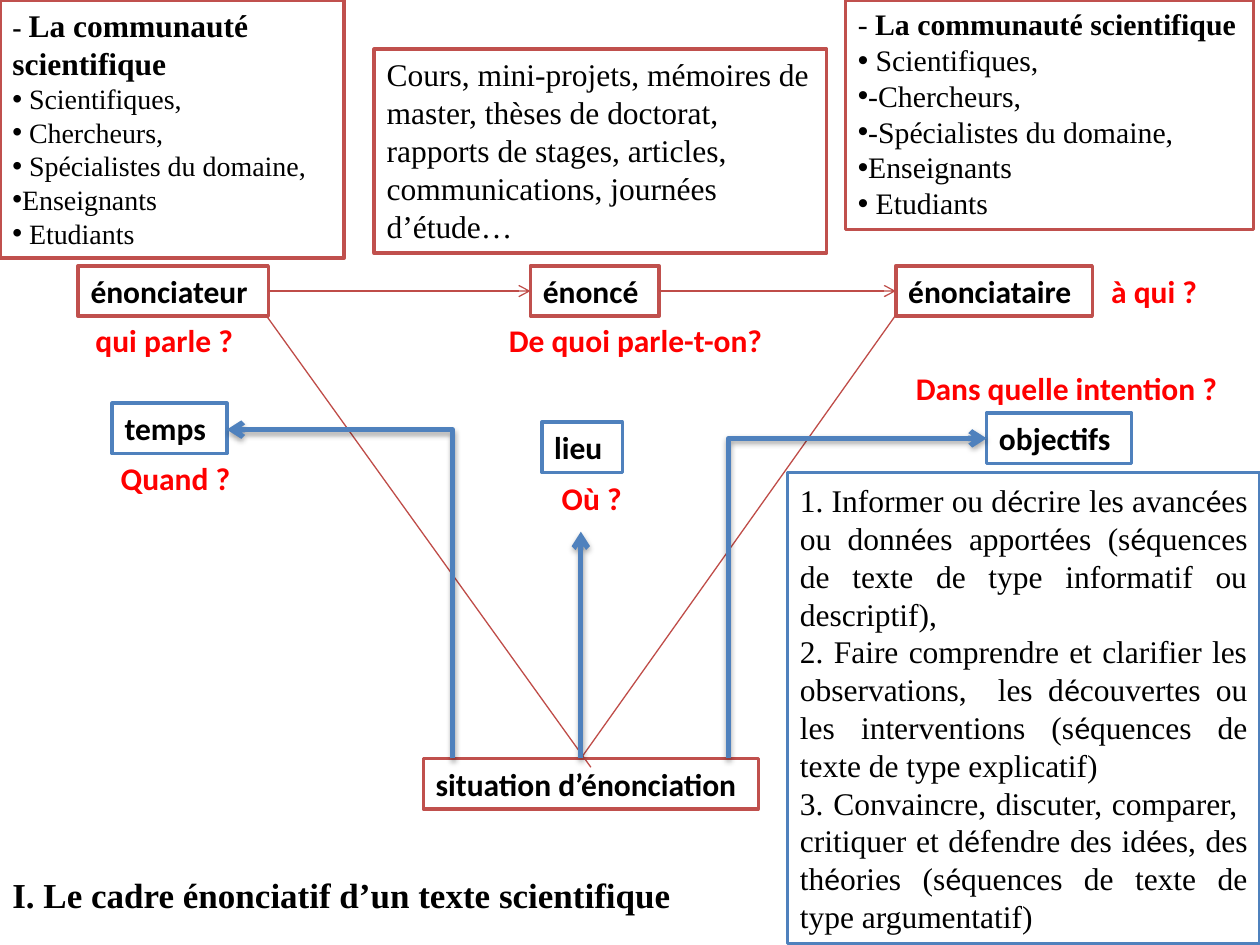
from collections import namedtuple
from lxml.etree import SubElement
from pptx import Presentation
from pptx.dml.color import RGBColor
from pptx.enum.shapes import MSO_CONNECTOR, MSO_SHAPE
from pptx.enum.text import MSO_ANCHOR, MSO_AUTO_SIZE, PP_ALIGN
from pptx.oxml.ns import qn
from pptx.util import Inches, Pt

HUES = {"red": "C0504D", "wire": "BF4C48", "blue": "4F81BD",
        "ask": "FF0000", "ink": "000000", "paper": "FFFFFF"}
SANS, SERIF = "Calibri", "Times New Roman"
COLS, ROWS = 100, 75
TAG = 4

Box = namedtuple("Box", "x y w h")

deck = Presentation()
deck.slide_width, deck.slide_height = Inches(10), Inches(7.5)
slide = deck.slides.add_slide(deck.slide_layouts[6])


def hue(name):
    return RGBColor.from_string(HUES[name])


def across(cols):
    return round(cols * deck.slide_width / COLS)


def down(rows):
    return round(rows * deck.slide_height / ROWS)


def inside(box, x, y, w, h):
    return Box(box.x + x, box.y + y, w, h)


def write(box, paras, line=None, size=18, font=SANS, color="ink", bold=False,
          wrap=False, bullets=False, align=PP_ALIGN.LEFT, anchor=MSO_ANCHOR.TOP):
    place = across(box.x), down(box.y), across(box.w), down(box.h)
    if line:
        shape = slide.shapes.add_shape(MSO_SHAPE.RECTANGLE, *place)
        shape.shadow.inherit = False
        shape.fill.solid()
        shape.fill.fore_color.rgb = hue("paper")
        shape.line.color.rgb = hue(line)
        shape.line.width = Pt(2)
    else:
        shape = slide.shapes.add_textbox(*place)
    frame = shape.text_frame
    frame.word_wrap = wrap
    frame.auto_size = MSO_AUTO_SIZE.SHAPE_TO_FIT_TEXT
    frame.vertical_anchor = anchor
    for i, runs in enumerate(paras):
        para = frame.paragraphs[0] if i == 0 else frame.add_paragraph()
        para.alignment = align
        if bullets and i:
            props = para._p.get_or_add_pPr()
            SubElement(props, qn("a:buFont")).set("typeface", "Arial")
            SubElement(props, qn("a:buChar")).set("char", "•")
        for part in [(runs, {})] if isinstance(runs, str) else runs:
            words, form = part
            run = para.add_run()
            run.text = words
            run.font.size = Pt(form.get("size", size))
            run.font.name = form.get("font", font)
            run.font.bold = form.get("bold", bold)
            run.font.color.rgb = hue(color)
    return shape


def style(link, color, width, arrow=True, shade=False):
    link.line.color.rgb = hue(color)
    link.line.width = Pt(width)
    if arrow:
        SubElement(link.line._get_or_add_ln(), qn("a:tailEnd")).set("type", "arrow")
    effects = SubElement(link._element.spPr, qn("a:effectLst"))
    if shade:
        cast = SubElement(effects, qn("a:outerShdw"), blurRad="40000",
                          dist="23000", dir="5400000", rotWithShape="0")
        tint = SubElement(cast, qn("a:srgbClr"), val=HUES["ink"])
        SubElement(tint, qn("a:alpha"), val="35000")


def join(start, end):
    return slide.shapes.add_connector(
        MSO_CONNECTOR.STRAIGHT, across(start[0]), down(start[1]),
        across(end[0]), down(end[1]))


def bend(start, end):
    x, y = across(start[0]), down(start[1])
    dx, dy = across(end[0]) - x, down(end[1]) - y
    link = slide.shapes.add_connector(MSO_CONNECTOR.ELBOW, 0, 0, 0, 0)
    link.width, link.height = abs(dy), abs(dx)
    link.left = x + (dx - abs(dy)) // 2
    link.top = y + (dy - abs(dx)) // 2
    form = link._element.spPr
    form.find(qn("a:prstGeom")).set("prst", "bentConnector2")
    turn = form.find(qn("a:xfrm"))
    turn.set("rot", "5400000" if dx > 0 else "16200000")
    turn.set("flipV", "1")
    if dx > 0:
        turn.set("flipH", "1")
    style(link, "blue", 3, shade=True)


def tags(box, items, **form):
    return [write(inside(box, x, y, w, TAG), [words], bold=True, **form)
            for words, x, y, w in items]


def chain(box):
    nodes = tags(box, [("énonciateur", 0, 0, 15.1), ("énoncé ", 35.9, 0, 10.2),
                       ("énonciataire", 64.9, 0, 15.6),
                       ("situation d’énonciation", 27.4, 39.1, 26.6)], line="red")
    for a, b in zip(nodes[:2], nodes[1:3]):
        link = join((0, 0), (1, 1))
        link.begin_connect(a, 3)
        link.end_connect(b, 1)
        style(link, "wire", 0.75)
    for start, end in [((14.9, 3.9), (40.7, 39.8)), ((64.9, 3.9), (39.9, 39.1))]:
        link = join((box.x + start[0], box.y + start[1]),
                    (box.x + end[0], box.y + end[1]))
        style(link, "wire", 0.75, arrow=False)


def setting(box):
    tags(box, [("temps ", 0, 0, 9.1), ("lieu ", 34.1, 1.5, 6.4),
               ("objectifs ", 69.4, 0.8, 11.5)], line="blue")


def goals(box):
    paras = [
        "1. Informer ou décrire les avancées ou données apportées (séquences de "
        "texte de type informatif ou descriptif),",
        "2. Faire comprendre et clarifier les observations,  les découvertes ou "
        "les interventions (séquences de texte de type explicatif)",
        "3. Convaincre, discuter, comparer,  critiquer et défendre des idées, des "
        "théories (séquences de texte de type argumentatif)"]
    mixed = [[(bit, {"font": SANS if bit == "é" else SERIF})
              for bit in para.replace("é", "|é|").split("|")] for para in paras]
    write(box, mixed, line="blue", wrap=True, align=PP_ALIGN.JUSTIFY,
          anchor=MSO_ANCHOR.MIDDLE)


def genres(box):
    write(box, ["Cours, mini-projets, mémoires de master, thèses de doctorat, "
                "rapports de stages, articles, communications, journées d’étude…"],
          line="red", font=SERIF, wrap=True)


def people(box, dash, head, size, items):
    title = [("- ", dash), ("La communauté scientifique", head)]
    write(box, [title] + items, line="red", size=size, font=SERIF,
          wrap=True, bullets=True)


def asks(box):
    tags(box, [("qui parle ? ", 6.6, 25, 13.6),
               ("De quoi parle-t-on?", 39.4, 25, 22.4),
               ("à qui ? ", 87.2, 21.1, 9.5),
               ("Dans quelle intention ?", 71.7, 28.8, 26.1),
               ("Où ?  ", 43.6, 37.5, 7.9),
               ("Quand ?", 8.6, 35.9, 10.8)], color="ask")


def arrows(box):
    base = box.y + box.h
    bend((box.x + 39.8, base), (box.x + box.w, box.y + 0.7))
    bend((box.x + 17.9, base), (box.x, box.y))
    style(join((box.x + 28.1, base), (box.x + 28.1, box.y + 8.1)),
          "blue", 3, shade=True)


def title(box):
    write(box, ["I. Le cadre énonciatif d’un texte scientifique"],
          size=20, font=SERIF, bold=True, wrap=True)


chain(Box(6.2, 21.1, 80.5, 43.1))
setting(Box(8.9, 32, 80.9, 5.5))
goals(Box(62.5, 37.5, 37.5, 37.4))
genres(Box(29.7, 3.9, 35.9, 16.2))
people(Box(0, 0, 27.3, 20.5), {"bold": True}, {"bold": True, "size": 18}, 16,
       [" Scientifiques,", " Chercheurs,", " Spécialistes du domaine,",
        "Enseignants", " Etudiants"])
people(Box(67.1, 0, 32.4, 18.2), {}, {"bold": True}, 17,
       [" Scientifiques,", "-Chercheurs,", "-Spécialistes du domaine,",
        "Enseignants", " Etudiants"])
asks(Box(0, 0, COLS, ROWS))
arrows(Box(18, 34.1, 60.3, 26.1))
title(Box(0, 68.8, 61.7, 4.4))
deck.save("out.pptx")
